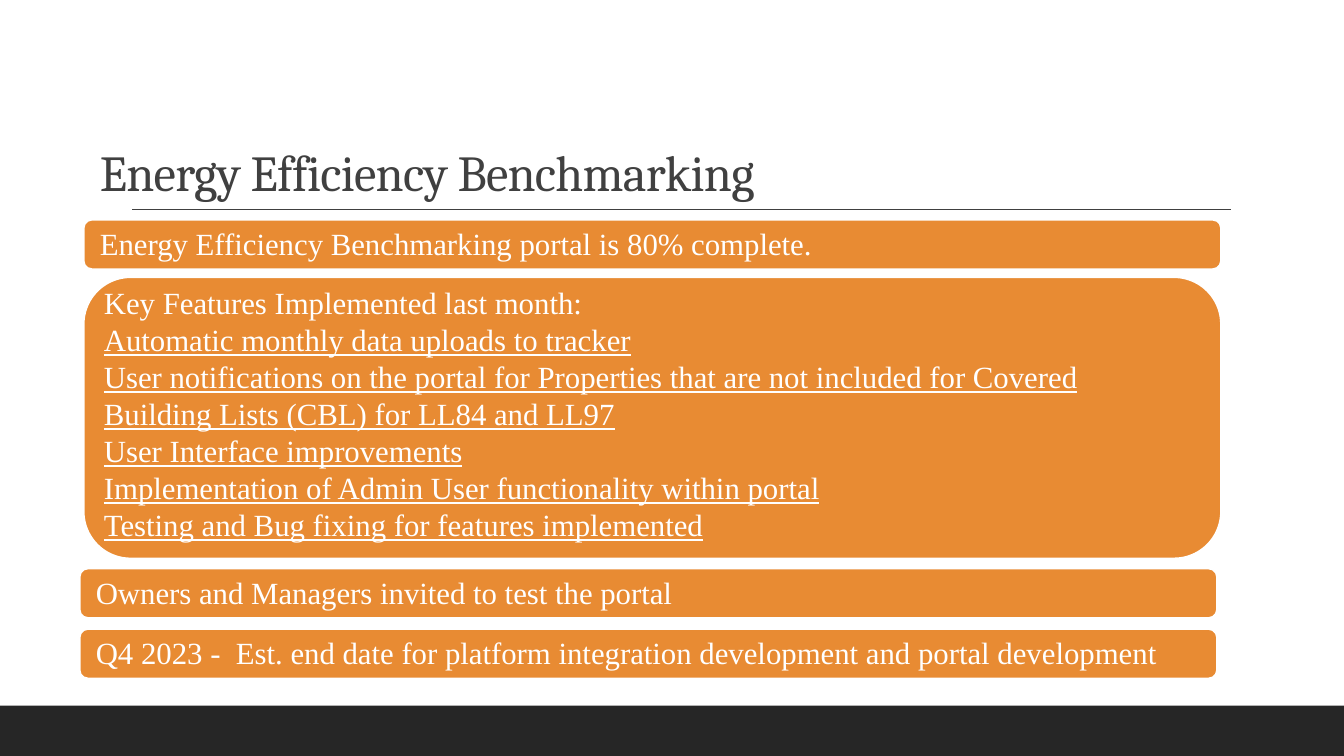
from dataclasses import dataclass

from lxml.etree import SubElement
from pptx import Presentation
from pptx.dml.color import RGBColor
from pptx.enum.shapes import MSO_CONNECTOR, MSO_SHAPE as SHAPE
from pptx.enum.text import MSO_ANCHOR as ANCHOR, MSO_AUTO_SIZE, PP_ALIGN as ALIGN
from pptx.oxml.ns import qn
from pptx.util import Inches, Pt

COLORS = {"orange": "E88B33", "white": "FFFFFF", "gray": "404040", "footer": "262626"}
Box = tuple[float, float, float, float]


@dataclass
class Card:
    box: Box
    text_box: Box
    lines: list[str]


def bar_card(left: float, top: float, text: str) -> Card:
    """A one-line card whose text box sits slightly up and to the left."""
    return Card((left, top, 11.28, 0.49), (left - 0.13, top - 0.03, 11.15, 0.53), [text])


CARDS = [
    bar_card(0.83, 2.18, "Energy Efficiency Benchmarking portal is 80% complete."),
    Card((0.83, 2.75, 11.28, 2.79), (0.74, 2.56, 11.28, 3.08), [
        "Key Features Implemented last month:",
        "Automatic monthly data uploads to tracker",
        "User notifications on the portal for Properties that are not included "
        "for Covered Building Lists (CBL) for LL84 and LL97",
        "User Interface improvements",
        "Implementation of Admin User functionality within portal",
        "Testing and Bug fixing for features implemented",
    ]),
    bar_card(0.79, 5.64, "Owners and Managers invited to test the portal"),
    bar_card(0.79, 6.24, "Q4 2023 -  Est. end date for platform integration "
                         "development and portal development"),
]


def rgb(name: str) -> RGBColor:
    return RGBColor.from_string(COLORS[name])


def inches(box: Box) -> list[Inches]:
    return [Inches(v) for v in box]


def add_block(shapes, kind: SHAPE, box: Box, fill: str):
    sp = shapes.add_shape(kind, *inches(box))
    sp.shadow.inherit = False
    sp.fill.solid()
    sp.fill.fore_color.rgb = rgb(fill)
    sp.line.fill.background()
    return sp


def style_run(r, font: str, size: float, color: str) -> None:
    r.font.name = font
    r.font.size = Pt(size)
    r.font.color.rgb = rgb(color)


def add_card(slide, card: Card) -> None:
    shapes = slide.shapes.add_group_shape().shapes
    sp = add_block(shapes, SHAPE.ROUNDED_RECTANGLE, card.box, "orange")
    sp.line.color.rgb = rgb("white")
    sp.line.width = Pt(1.25)

    tf = shapes.add_textbox(*inches(card.text_box)).text_frame
    tf.word_wrap = True
    tf.vertical_anchor = ANCHOR.MIDDLE
    tf.margin_left = tf.margin_right = Inches(0.29)
    tf.margin_top = tf.margin_bottom = 0
    tf.text = "\n".join(card.lines)
    for i, p in enumerate(tf.paragraphs):
        r = p.runs[0]
        style_run(r, "Times New Roman", 22, "white")
        if i:
            r.font.underline = True


def add_title(slide, text: str) -> None:
    title = slide.shapes.title
    title.left, title.top, title.width, title.height = inches((0.89, 1.37, 11.6, 0.69))
    tf = title.text_frame
    tf.text = text
    tf.word_wrap = True
    tf.auto_size = MSO_AUTO_SIZE.NONE
    tf.vertical_anchor = ANCHOR.BOTTOM
    p = tf.paragraphs[0]
    p.alignment = ALIGN.LEFT
    p.line_spacing = 0.9
    r = p.runs[0]
    style_run(r, "Cambria", 36, "gray")
    r._r.get_or_add_rPr().set("spc", "-50")


def add_rule(slide) -> None:
    line = slide.shapes.add_connector(
        MSO_CONNECTOR.STRAIGHT, *inches((1.31, 2.08, 12.21, 2.08)))
    line.line.color.rgb = rgb("gray")
    line.line.width = Pt(1)
    SubElement(line._element.spPr, qn("a:effectLst"))


def main() -> None:
    prs = Presentation()
    prs.slide_width, prs.slide_height = Inches(13.33), Inches(7.5)
    slide = prs.slides.add_slide(prs.slide_layouts[5])

    # Footer band, title and rule
    add_block(slide.shapes, SHAPE.RECTANGLE, (0, 7, 13.33, 0.5), "footer")
    add_title(slide, "Energy Efficiency Benchmarking")
    add_rule(slide)

    # Status cards
    for card in CARDS:
        add_card(slide, card)

    prs.save("out.pptx")


if __name__ == "__main__":
    main()
